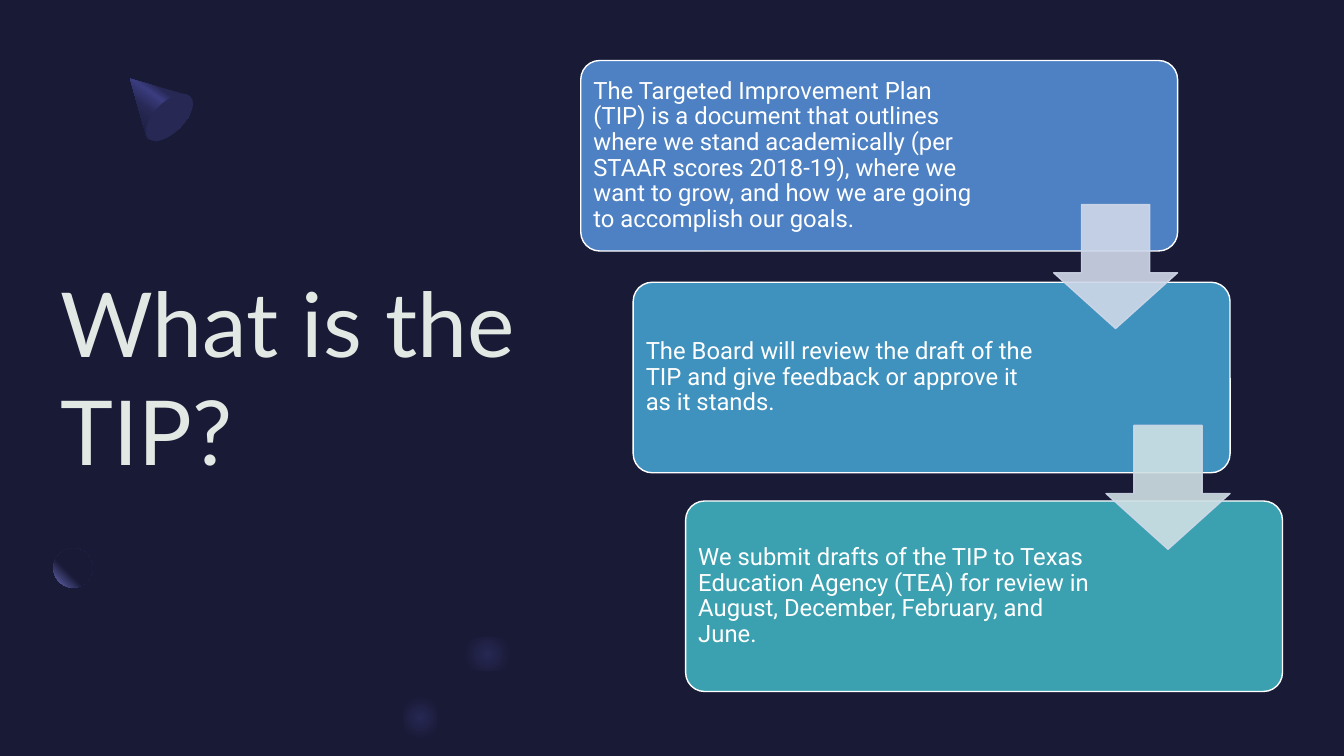
from lxml import etree
from pptx import Presentation
from pptx.dml.color import RGBColor
from pptx.enum.shapes import MSO_SHAPE
from pptx.enum.text import MSO_ANCHOR, PP_ALIGN
from pptx.oxml.ns import qn
from pptx.util import Inches, Pt

ROUND, OVAL, ARROW = MSO_SHAPE.ROUNDED_RECTANGLE, MSO_SHAPE.OVAL, MSO_SHAPE.DOWN_ARROW
MIDDLE, LEFT = MSO_ANCHOR.MIDDLE, PP_ALIGN.LEFT

NIGHT = RGBColor(0x19, 0x1A, 0x36)
DUSK = RGBColor(0x27, 0x28, 0x53)
INDIGO = RGBColor(0x3B, 0x3D, 0x80)
LILAC = RGBColor(0x6C, 0x6E, 0xBB)
CREAM = RGBColor(0xE2, 0xE8, 0xE3)
WHITE = RGBColor(0xFF, 0xFF, 0xFF)
BLUE = RGBColor(0x4D, 0x81, 0xC3)
SKY = RGBColor(0x40, 0x92, 0xBE)
TEAL = RGBColor(0x3B, 0xA1, 0xB1)
MIST = RGBColor(0xD0, 0xD8, 0xE9)
FOAM = RGBColor(0xCE, 0xE0, 0xE4)

STEPS = [
    (0.6, 3.89, BLUE, "The Targeted Improvement Plan (TIP) is a document that outlines "
     "where we stand academically (per STAAR scores 2018-19), where we want to grow, "
     "and how we are going to accomplish our goals."),
    (2.8, 4.06, SKY, "The Board will review the draft of the TIP and give feedback "
     "or approve it as it stands."),
    (4.97, 4.06, TEAL, "We submit drafts of the TIP to Texas Education Agency (TEA) "
     "for review in August, December, February, and June."),
]
SHIFT = 0.52
CONE = [(1.29, 0.78), (1.85, 0.94), (1.88, 0.96), (1.91, 1.04), (1.87, 1.16),
        (1.78, 1.27), (1.66, 1.36), (1.55, 1.4), (1.47, 1.38), (1.45, 1.35)]


def add_shape(slide, kind, box, fill=None, line=None):
    """Add a flat preset shape with an optional fill and outline."""
    shape = slide.shapes.add_shape(kind, *map(Inches, box))
    shape.shadow.inherit = False
    if fill is not None:
        shape.fill.solid()
        shape.fill.fore_color.rgb = fill
    if line is None:
        shape.line.fill.background()
    else:
        shape.line.color.rgb = line
        shape.line.width = Pt(1)
    return shape


def set_fade(shape, stops, angle=None, focus=(50, 50, 50, 50)):
    """Fill a shape with a linear fade, or a round one if no angle is given."""
    shape.fill.gradient()
    grad = shape.element.spPr.find(qn("a:gradFill"))
    for child in list(grad):
        grad.remove(child)
    items = etree.SubElement(grad, qn("a:gsLst"))
    for place, color in stops:
        stop = etree.SubElement(items, qn("a:gs"), pos=str(place * 1000))
        etree.SubElement(stop, qn("a:srgbClr"), val=str(color))
    if angle is not None:
        etree.SubElement(grad, qn("a:lin"), ang=str(angle * 60000), scaled="0")
    else:
        route = etree.SubElement(grad, qn("a:path"), path="circle")
        sides = {side: str(part * 1000) for side, part in zip("ltrb", focus)}
        etree.SubElement(route, qn("a:fillToRect"), **sides)


def set_text(shape, text, size, font, color, space=1.0):
    """Write one left-aligned paragraph, centred in height."""
    frame = shape.text_frame
    frame.word_wrap = True
    frame.vertical_anchor = MIDDLE
    para = frame.paragraphs[0]
    para.text = text
    para.alignment = LEFT
    para.line_spacing = space
    para.font.size = Pt(size)
    para.font.name = font
    para.font.color.rgb = color
    return frame


def add_title(slide, text):
    """Add the large heading on the left."""
    box = slide.shapes.add_textbox(*map(Inches, (0.6, 1.66, 4.96, 4.13)))
    frame = set_text(box, text, 64, "Lato", CREAM)
    frame.margin_left = frame.margin_right = 0
    frame.margin_top = frame.margin_bottom = 0


def add_cone(slide):
    """Add the shaded cone with its round base."""
    start, *rest = [(Inches(x), Inches(y)) for x, y in CONE]
    maker = slide.shapes.build_freeform(*start)
    maker.add_line_segments(rest, close=True)
    cone = maker.convert_to_shape()
    cone.shadow.inherit = False
    cone.line.fill.background()
    set_fade(cone, [(30, DUSK), (40, INDIGO), (60, DUSK), (100, NIGHT)], 125)
    add_shape(slide, OVAL, (1.53, 0.87, 0.3, 0.59), DUSK).rotation = 45


def add_glow(slide, box, stops, focus=(50, 50, 50, 50)):
    """Add an oval that fades into the night."""
    set_fade(add_shape(slide, OVAL, box), stops, focus=focus)


def add_step(slide, left, top, width, fill, text):
    """Add a rounded card whose text keeps to the given width."""
    card = add_shape(slide, ROUND, (left, top, 5.92, 1.89), fill, WHITE)
    card.adjustments[0] = 0.1
    frame = set_text(card, text, 17, "Roboto", WHITE, 0.9)
    frame.margin_left = Inches(0.07)
    frame.margin_right = Inches(5.87 - width)


def add_arrow(slide, left, top, fill):
    """Add a sheer arrow that leads to the next card."""
    arrow = add_shape(slide, ARROW, (left, top, 1.23, 1.23), fill, MIST)
    arrow.adjustments[0] = 0.55
    arrow.adjustments[1] = 0.45
    for color in arrow.element.spPr.iter(qn("a:srgbClr")):
        etree.SubElement(color, qn("a:alpha"), val="90000")


def main():
    """Build the slide and save it."""
    deck = Presentation()
    deck.slide_width, deck.slide_height = Inches(13.33), Inches(7.5)
    slide = deck.slides.add_slide(deck.slide_layouts[6])
    slide.background.fill.solid()
    slide.background.fill.fore_color.rgb = NIGHT

    add_title(slide, "What is the TIP?")
    add_cone(slide)
    add_glow(slide, (0.53, 5.44, 0.39, 0.39), [(60, NIGHT), (100, LILAC)], (100, 0, 0, 100))
    for box in [(4.5, 6.32, 0.67, 0.34), (4.0, 6.82, 0.34, 0.6)]:
        add_glow(slide, box, [(0, DUSK), (65, NIGHT), (100, NIGHT)])

    for rank, (top, width, fill, text) in enumerate(STEPS):
        add_step(slide, 5.76 + SHIFT * rank, top, width, fill, text)
    for rank, fill in enumerate([MIST, FOAM]):
        add_arrow(slide, 10.45 + SHIFT * rank, 2.03 + 2.19 * rank, fill)
    deck.save("out.pptx")


if __name__ == "__main__":
    main()
